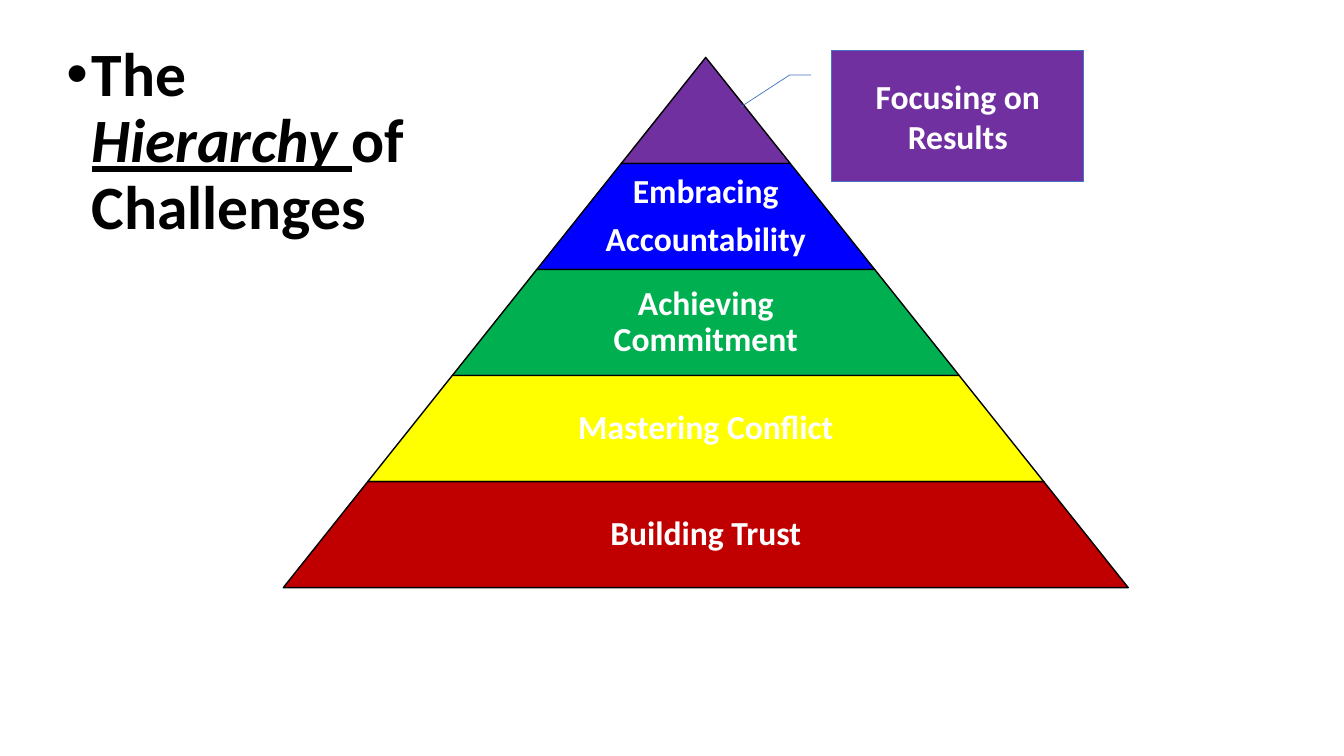
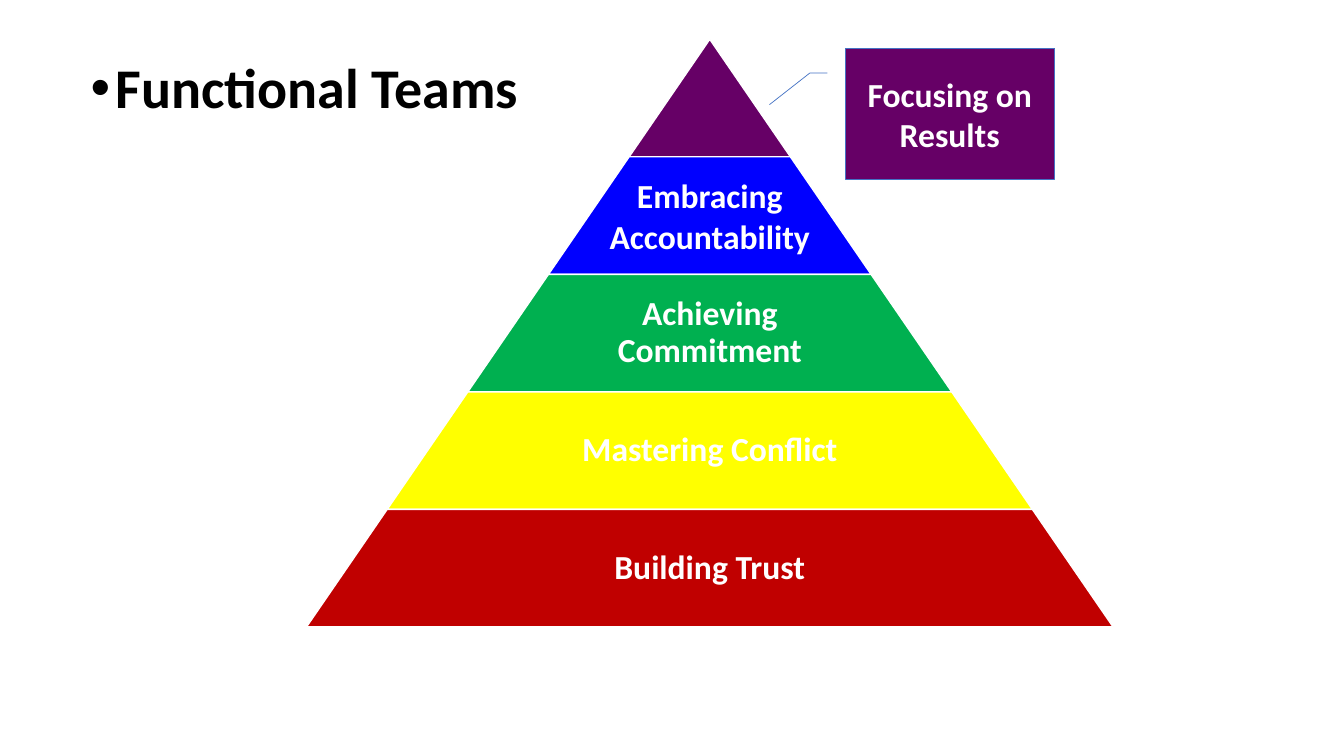
"""Build two slides that show the pyramid of team challenges."""
from dataclasses import dataclass

from lxml import etree
from pptx import Presentation
from pptx import util as u
from pptx.dml.color import RGBColor
from pptx.enum import shapes, text
from pptx.oxml.ns import qn

EMU_PER_PX = 9144
FONT = "Calibri"
LABEL_PT = 24
LABEL_WIDTH = 0.65
LABEL_INSET = 3
BULLET_INDENT = 25
CALLOUT_LEADER = (3 / 16, -1 / 12, 3 / 16, -1 / 6, 0.43, -0.36)
COLORS = {
    "black": "000000",
    "white": "FFFFFF",
    "violet": "7030A0",
    "plum": "660066",
    "blue": "0000FF",
    "green": "00B050",
    "yellow": "FFFF00",
    "red": "C00000",
    "leader": "4472C4",
}


@dataclass(frozen=True)
class Box:
    left: float
    top: float
    width: float
    height: float

    def emu(self) -> tuple[int, ...]:
        return tuple(px(side) for side in (self.left, self.top, self.width, self.height))


@dataclass(frozen=True)
class Words:
    text: str
    stressed: bool = False


@dataclass(frozen=True)
class Tier:
    color: str
    lines: tuple[str, ...]


@dataclass(frozen=True)
class PyramidSlide:
    title: tuple[Words, ...]
    title_box: Box
    title_pt: int
    pyramid: Box
    peak_color: str
    outline: str
    pair_spacing: float
    pair_gap_pt: int
    callout: Box


TIERS = (
    Tier("blue", ("Embracing", "Accountability")),
    Tier("green", ("Achieving Commitment",)),
    Tier("yellow", ("Mastering Conflict",)),
    Tier("red", ("Building Trust",)),
)

PAGES = (
    PyramidSlide(
        (Words("The "), Words("Hierarchy ", True), Words("of Challenges")),
        Box(56, 38, 359, 78), 44, Box(281, 57, 838, 526),
        "violet", "black", 0.9, 8, Box(825, 50, 250, 130),
    ),
    PyramidSlide(
        (Words("Functional Teams"),),
        Box(80, 55, 490, 145), 40, Box(304, 39, 800, 583),
        "plum", "white", 1.0, 0, Box(838, 48, 208, 130),
    ),
)


def px(length: float) -> int:
    return round(length * EMU_PER_PX)


def rgb(color: str) -> RGBColor:
    return RGBColor.from_string(COLORS[color])


def add_words(paragraph, words: Words, size: int, color: str) -> None:
    run = paragraph.add_run()
    run.text = words.text
    run.font.name = FONT
    run.font.size = u.Pt(size)
    run.font.bold = True
    run.font.color.rgb = rgb(color)
    if words.stressed:
        run.font.italic = run.font.underline = True


def add_filled(slide, preset, box: Box, fill: str, outline: str, line_pt: float):
    shape = slide.shapes.add_shape(preset, *box.emu())
    shape.shadow.inherit = False
    shape.fill.solid()
    shape.fill.fore_color.rgb = rgb(fill)
    shape.line.color.rgb = rgb(outline)
    shape.line.width = u.Pt(line_pt)
    return shape


def add_label(slide, box: Box, lines: tuple[str, ...], spacing: float, gap_pt: int) -> None:
    frame = slide.shapes.add_textbox(*box.emu()).text_frame
    frame.word_wrap = True
    frame.vertical_anchor = text.MSO_ANCHOR.MIDDLE
    frame.margin_left = frame.margin_right = px(LABEL_INSET)
    frame.margin_top = frame.margin_bottom = px(LABEL_INSET)
    for index, line in enumerate(lines):
        paragraph = frame.add_paragraph() if index else frame.paragraphs[0]
        paragraph.alignment = text.PP_ALIGN.CENTER
        paragraph.line_spacing = spacing
        if index < len(lines) - 1:
            paragraph.space_after = u.Pt(gap_pt)
        add_words(paragraph, Words(line), LABEL_PT, "white")


def add_pyramid(slide, page: PyramidSlide) -> None:
    pyramid = page.pyramid
    tiers = (Tier(page.peak_color, ()), *TIERS)
    height = pyramid.height / len(tiers)
    step = pyramid.width / len(tiers)
    center = pyramid.left + pyramid.width / 2
    for level, tier in enumerate(tiers):
        width = step * (level + 1)
        top = pyramid.top + height * level
        band = add_filled(
            slide, shapes.MSO_SHAPE.TRAPEZOID,
            Box(center - width / 2, top, width, height), tier.color, page.outline, 1,
        )
        band.adjustments[0] = step / 2 / height
        if tier.lines:
            label_width = width * LABEL_WIDTH
            paired = len(tier.lines) > 1
            add_label(
                slide, Box(center - label_width / 2, top, label_width, height),
                tier.lines, page.pair_spacing if paired else 0.9, page.pair_gap_pt,
            )


def add_title(slide, page: PyramidSlide) -> None:
    frame = slide.shapes.add_textbox(*page.title_box.emu()).text_frame
    frame.word_wrap = True
    paragraph = frame.paragraphs[0]
    paragraph.line_spacing = 0.9
    properties = paragraph._p.get_or_add_pPr()
    properties.set("marL", str(px(BULLET_INDENT)))
    properties.set("indent", str(-px(BULLET_INDENT)))
    etree.SubElement(properties, qn("a:buFont"), typeface="Arial")
    etree.SubElement(properties, qn("a:buChar"), char="•")
    for words in page.title:
        add_words(paragraph, words, page.title_pt, "black")


def add_callout(slide, page: PyramidSlide) -> None:
    callout = add_filled(
        slide, shapes.MSO_SHAPE.LINE_CALLOUT_2, page.callout, page.peak_color, "leader", 0.5
    )
    for index, ratio in enumerate(CALLOUT_LEADER):
        callout.adjustments[index] = ratio
    frame = callout.text_frame
    frame.word_wrap = True
    frame.vertical_anchor = text.MSO_ANCHOR.MIDDLE
    frame.paragraphs[0].alignment = text.PP_ALIGN.CENTER
    add_words(frame.paragraphs[0], Words("Focusing on Results"), LABEL_PT, "white")


def main() -> None:
    deck = Presentation()
    deck.slide_width, deck.slide_height = px(1333), px(750)
    for page in PAGES:
        slide = deck.slides.add_slide(deck.slide_layouts[6])
        add_pyramid(slide, page)
        add_title(slide, page)
        add_callout(slide, page)
    deck.save("out.pptx")


if __name__ == "__main__":
    main()
